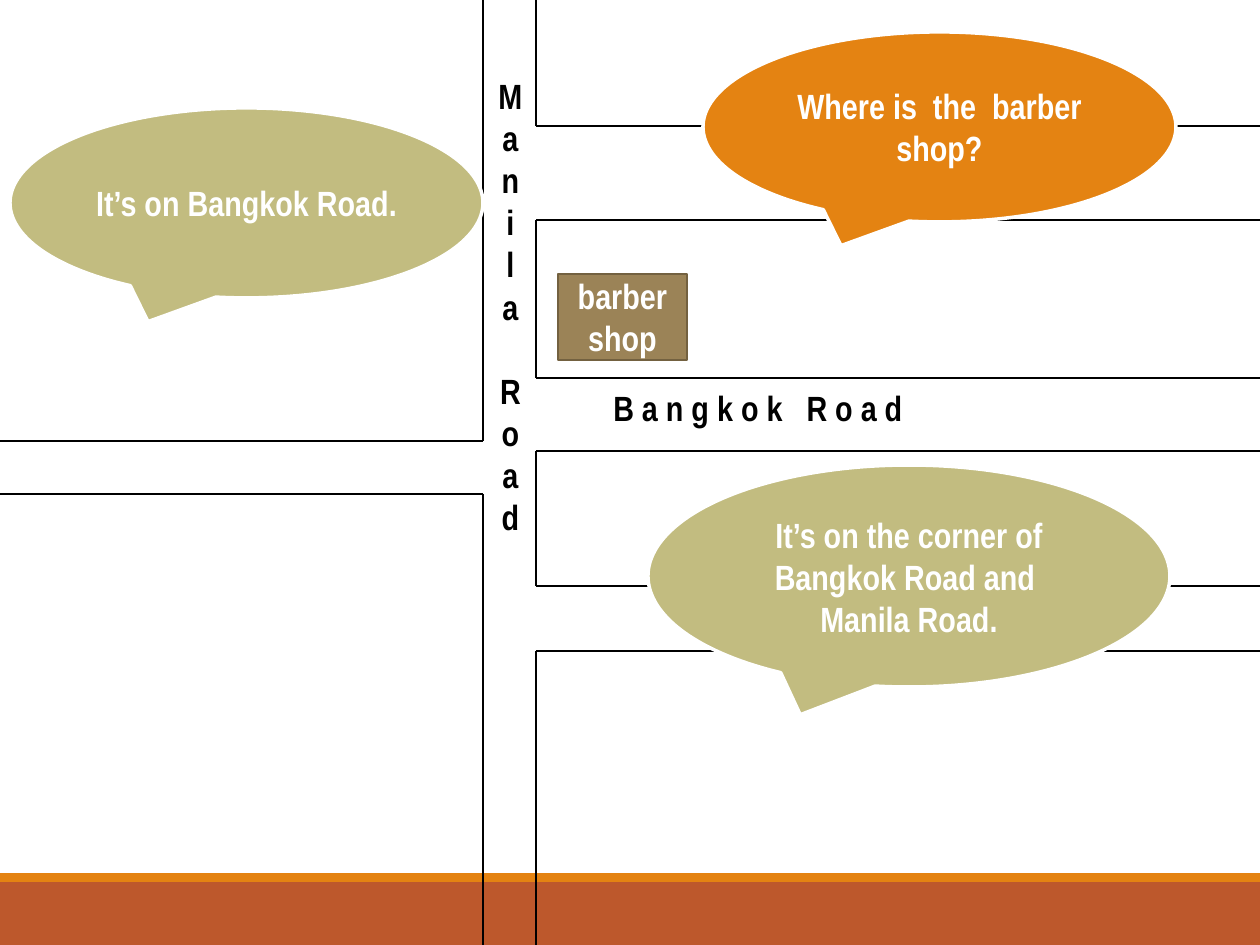
from itertools import pairwise

from pptx import Presentation
from pptx.dml.color import RGBColor
from pptx.enum.shapes import MSO_CONNECTOR as CONN, MSO_SHAPE as SHAPE
from pptx.enum.text import MSO_ANCHOR as ANCHOR, MSO_AUTO_SIZE as AUTO, PP_ALIGN as ALIGN
from pptx.oxml.ns import qn
from pptx.util import Emu, Pt

W, H = 1260, 945
BLACK = RGBColor(0x00, 0x00, 0x00)
WHITE = RGBColor(0xFF, 0xFF, 0xFF)
ORANGE = RGBColor(0xE4, 0x83, 0x12)
RUST = RGBColor(0xBD, 0x58, 0x2C)
OLIVE = RGBColor(0xC2, 0xBC, 0x80)
BROWN = RGBColor(0x9B, 0x83, 0x57)
DARK_BROWN = RGBColor(0x73, 0x61, 0x40)


def px(n):
    return Emu(round(n * 914400 / 126))


def write(tf, text, color=WHITE, size=20, bold=True, font="Arial Narrow"):
    for i, line in enumerate(text.split("\n")):
        p = tf.add_paragraph() if i else tf.paragraphs[0]
        p.alignment = ALIGN.CENTER
        r = p.add_run()
        r.text = line
        r.font.name, r.font.size, r.font.bold = font, Pt(size), bold
        r.font.color.rgb = color


def add_box(s, kind, box, fill, line=None, width=1, text=None):
    sp = s.shapes.add_shape(kind, *map(px, box))
    sp.shadow.inherit = False
    sp.fill.solid()
    sp.fill.fore_color.rgb = fill
    if line is None:
        sp.line.fill.background()
    else:
        sp.line.color.rgb = line
        sp.line.width = Pt(width)
    if text:
        sp.text_frame.word_wrap = True
        sp.text_frame.vertical_anchor = ANCHOR.MIDDLE
        write(sp.text_frame, text)


def add_footer(s, x, y, w, h, stripe=9):
    add_box(s, SHAPE.RECTANGLE, (x, y + stripe, w, h - stripe), RUST)
    add_box(s, SHAPE.RECTANGLE, (x, y, w, stripe), ORANGE)


def add_kerb(s, points):
    for (x1, y1), (x2, y2) in pairwise(points):
        c = s.shapes.add_connector(CONN.STRAIGHT, px(x1), px(y1), px(x2), px(y2))
        c.line.color.rgb = BLACK
        c.line.width = Pt(0.75)
        sp_pr = c._element.spPr
        sp_pr.append(sp_pr.makeelement(qn("a:effectLst"), {}))


def add_street_map(s, x, y, w, h):
    left, right = x + 483, x + 536  # the two sides of Manila Road
    end, bottom = x + w, y + h
    # Blocks west of Manila Road
    add_kerb(s, [(x, y + 441), (left, y + 441), (left, y)])
    add_kerb(s, [(x, y + 494), (left, y + 494), (left, y + 588), (left, bottom)])
    # Blocks east of Manila Road
    add_kerb(s, [(right, y), (right, y + 126), (end, y + 126)])
    for top, base in ((220, 378), (451, 586)):
        add_kerb(s, [(end, y + top), (right, y + top), (right, y + base), (end, y + base)])
    add_kerb(s, [(end, y + 651), (right, y + 651), (right, bottom)])


def add_road_name(s, box, text, vert, rotation=0):
    sp = s.shapes.add_textbox(*map(px, box))
    sp.rotation = rotation
    tf = sp.text_frame
    tf.word_wrap = False
    tf.auto_size = AUTO.SHAPE_TO_FIT_TEXT
    tf._txBody.bodyPr.set("vert", vert)
    write(tf, text, color=BLACK)


def add_speech(s, box, text, fill):
    add_box(s, SHAPE.OVAL_CALLOUT, box, fill, WHITE, 2, text)


def main():
    prs = Presentation()
    prs.slide_width, prs.slide_height = px(W), px(H)
    s = prs.slides.add_slide(prs.slide_layouts[6])

    add_footer(s, 0, 873, W, 72)
    add_street_map(s, 0, 0, W, H)

    # Question, second answer and the shop
    add_speech(s, (703, 32, 473, 190), "Where is  the  barber shop?", ORANGE)
    add_speech(s, (648, 465, 522, 222),
               "It’s on the corner of Bangkok Road and \nManila Road.", OLIVE)
    add_box(s, SHAPE.RECTANGLE, (558, 274, 129, 86), BROWN, DARK_BROWN, 1.25,
            "barber\nshop")

    # Road names
    add_road_name(s, (474, 35, 73, 542), "Manila Road", "wordArtVert")
    add_road_name(s, (724, 281, 68, 267), "B a n g k o k   R o a d", "vert", 270)

    # First answer
    add_speech(s, (10, 108, 473, 190), "It’s on Bangkok Road.", OLIVE)

    prs.save("out.pptx")


if __name__ == "__main__":
    main()
